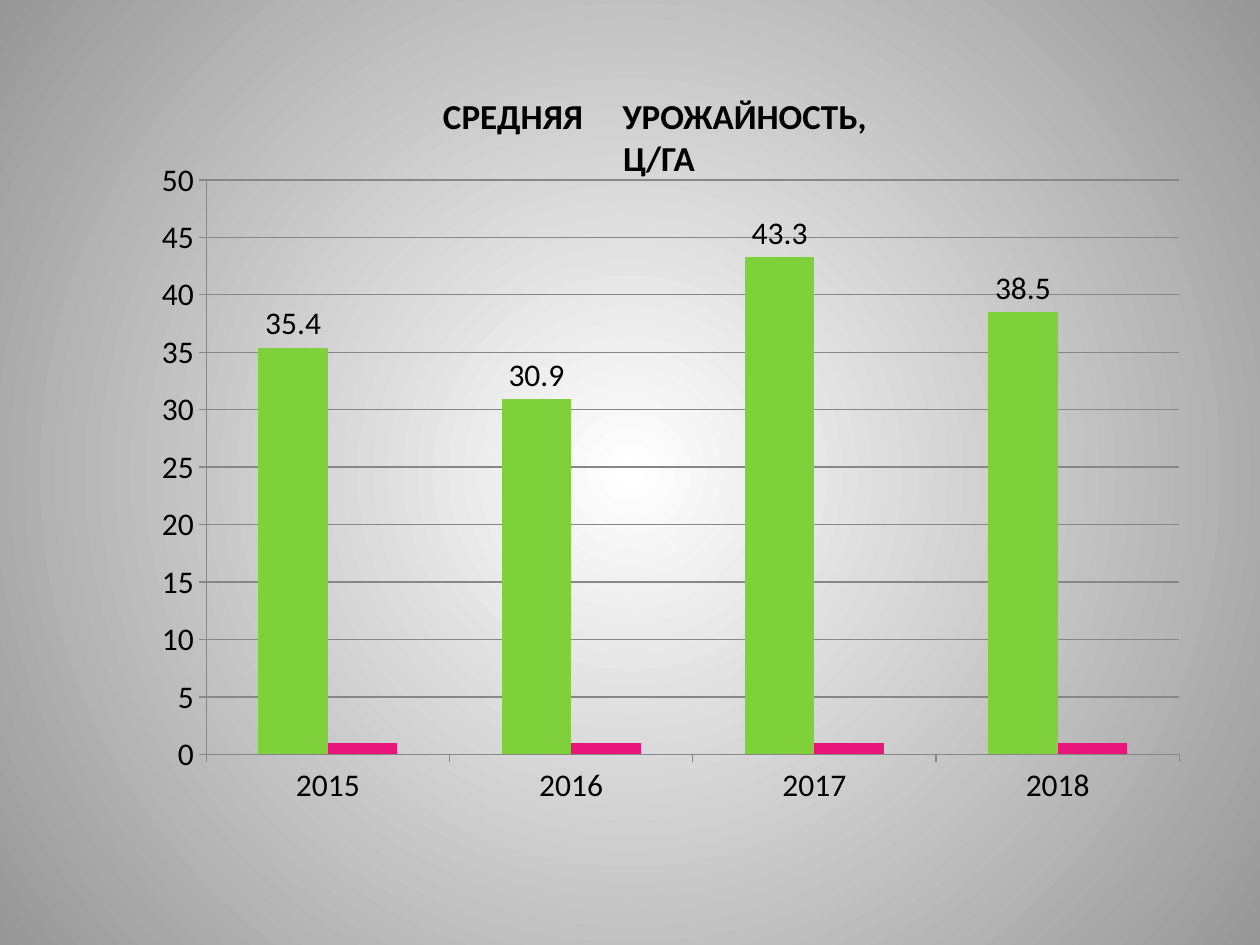
from lxml.etree import SubElement
from pptx import Presentation
from pptx.chart.data import CategoryChartData
from pptx.dml.color import RGBColor
from pptx.enum.chart import XL_CHART_TYPE, XL_LABEL_POSITION, XL_TICK_MARK
from pptx.enum.text import MSO_ANCHOR, MSO_AUTO_SIZE, PP_ALIGN
from pptx.oxml import parse_xml
from pptx.oxml.ns import nsdecls, qn
from pptx.util import Inches, Pt

# Content
TITLE_LINES = [["СРЕДНЯЯ", " ", "УРОЖАЙНОСТЬ, "], ["Ц/ГА"]]
YEARS = ["2015", "2016", "2017", "2018"]
BLACK = RGBColor(0, 0, 0)
WHITE = RGBColor(255, 255, 255)
GRAY = RGBColor(0x97, 0x97, 0x97)
GRID = RGBColor(0x87, 0x87, 0x87)
SERIES = [
    ("Series 1", [35.4, 30.9, 43.3, 38.5], RGBColor(0x7F, 0xD1, 0x3B)),
    ("Series 2", [1, 1, 1, 1], RGBColor(0xEA, 0x15, 0x7A)),
]
FONT = "Calibri"
TITLE_BOX = (1.56, 0.7, 7.34, 0.77)
CHART_BOX = (0.47, 1.09, 8.98, 5.63)
PLOT_SHARES = {"x": 0.13, "y": 0.06, "w": 0.86, "h": 0.81}
WORD_GAP = 18  # extra points between the first two title words


def format_font(font, size, bold=False, color=BLACK):
    font.name, font.size, font.bold = FONT, Pt(size), bold
    font.color.rgb = color


def add_text(paragraph, text, size=20, bold=True, spacing=0):
    run = paragraph.add_run()
    run.text = text
    format_font(run.font, size, bold)
    if spacing:
        run.font._element.set("spc", str(spacing * 100))


def set_background(slide):
    fill = slide.background.fill
    fill.gradient()
    for stop, color in zip(fill.gradient_stops, (WHITE, GRAY)):
        stop.color.rgb = color
    linear = next(slide._element.iter(qn("a:lin")))
    linear.getparent().replace(linear, parse_xml(
        f'<a:path {nsdecls("a")} path="circle">'
        '<a:fillToRect l="50000" t="50000" r="50000" b="50000"/></a:path>'))


def add_title(slide):
    title = slide.shapes.title
    title.left, title.top, title.width, title.height = map(Inches, TITLE_BOX)
    frame = title.text_frame
    frame.word_wrap = True
    frame.auto_size = MSO_AUTO_SIZE.SHAPE_TO_FIT_TEXT
    frame.vertical_anchor = MSO_ANCHOR.TOP
    for index, pieces in enumerate(TITLE_LINES):
        paragraph = frame.add_paragraph() if index else frame.paragraphs[0]
        paragraph.alignment = PP_ALIGN.CENTER
        for piece in pieces:
            add_text(paragraph, piece, spacing=WORD_GAP if piece == " " else 0)


def set_plot_layout(chart):
    plot_area = chart._chartSpace.chart.plotArea
    layout = plot_area.find(qn("c:layout"))
    if layout is None:
        layout = parse_xml(f'<c:layout {nsdecls("c")}/>')
        plot_area.insert(0, layout)
    manual = SubElement(layout, qn("c:manualLayout"))
    settings = {"layoutTarget": "inner", "xMode": "edge", "yMode": "edge", **PLOT_SHARES}
    for name, value in settings.items():
        SubElement(manual, qn(f"c:{name}")).set("val", str(value))


def add_yield_chart(slide):
    data = CategoryChartData()
    data.categories = YEARS
    for name, values, _ in SERIES:
        data.add_series(name, values)
    chart = slide.shapes.add_chart(
        XL_CHART_TYPE.COLUMN_CLUSTERED, *map(Inches, CHART_BOX), data).chart
    format_font(chart.font, 18)
    chart.has_title = chart.has_legend = False
    set_plot_layout(chart)

    # Columns
    plot = chart.plots[0]
    plot.vary_by_categories = False
    plot.gap_width, plot.overlap = 150, 0
    for series, (_, _, color) in zip(plot.series, SERIES):
        series.format.fill.solid()
        series.format.fill.fore_color.rgb = color
    labels = plot.series[0].data_labels
    labels.show_value = True
    labels.position = XL_LABEL_POSITION.OUTSIDE_END
    format_font(labels.font, 18)

    # Axes and gridlines
    value_axis = chart.value_axis
    value_axis.minimum_scale, value_axis.maximum_scale, value_axis.major_unit = 0, 50, 5
    value_axis.has_major_gridlines = True
    for axis in (chart.category_axis, value_axis):
        axis.major_tick_mark = XL_TICK_MARK.OUTSIDE
    for part in (chart.category_axis, value_axis, value_axis.major_gridlines):
        part.format.line.color.rgb = GRID
        part.format.line.width = Pt(0.75)


def main():
    presentation = Presentation()
    presentation.slide_width, presentation.slide_height = Inches(10), Inches(7.5)
    slide = presentation.slides.add_slide(presentation.slide_layouts[5])
    set_background(slide)
    add_title(slide)
    add_yield_chart(slide)
    presentation.save("out.pptx")


if __name__ == "__main__":
    main()
